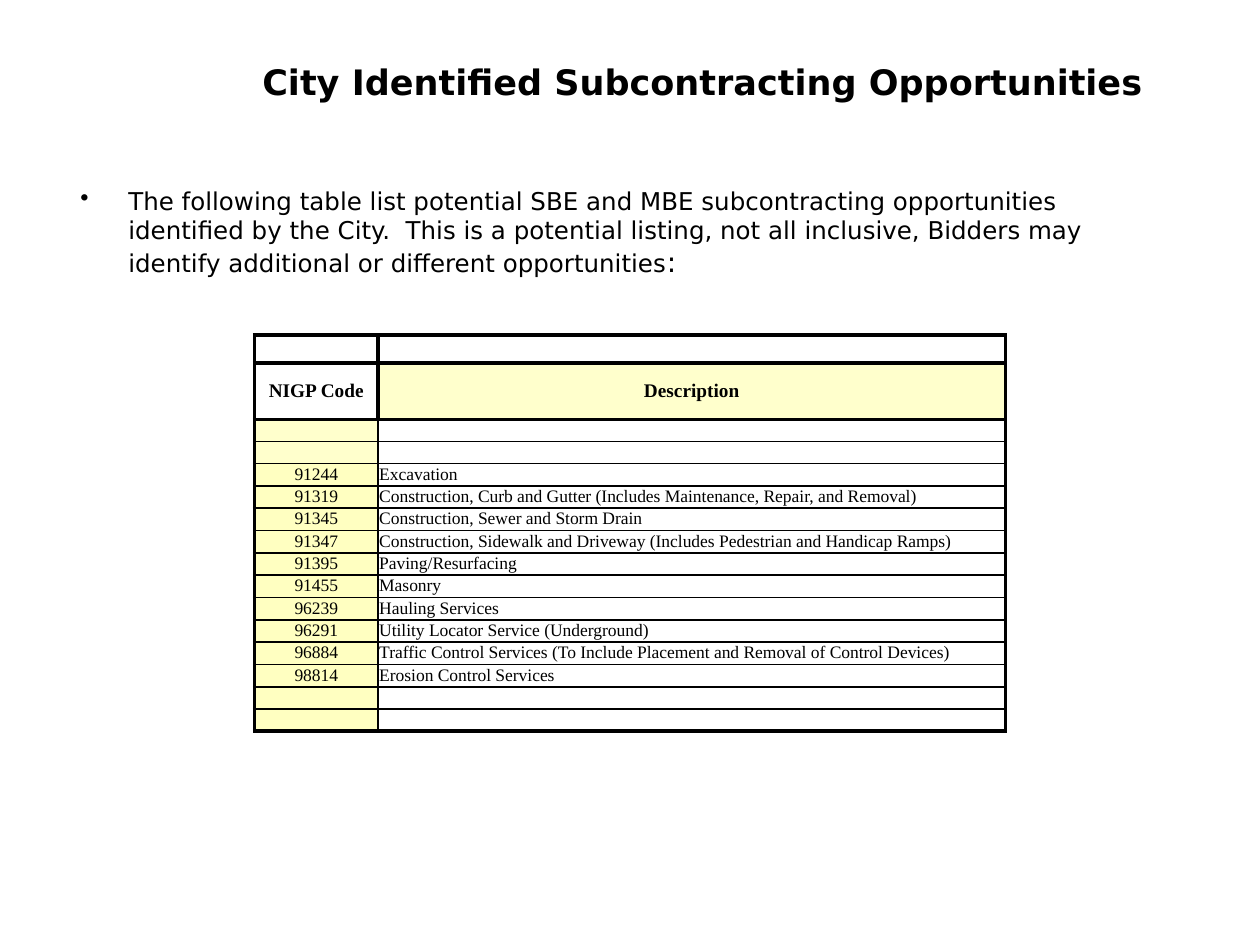
from dataclasses import dataclass

import pptx
import pptx.dml.color
import pptx.enum.text
import pptx.oxml
import pptx.oxml.ns
import pptx.util
from lxml import etree

ALIGN = pptx.enum.text.PP_ALIGN
ANCHOR = pptx.enum.text.MSO_ANCHOR
Inches, Pt, qn = pptx.util.Inches, pptx.util.Pt, pptx.oxml.ns.qn

SANS, SERIF = "DejaVu Sans", "Times New Roman"
BLACK, CREAM, YELLOW = "000000", "FFFFCC", "FFFFC1"
THICK, THIN = 2.25, 1
WIDTH, HEIGHT = 10, 7.5


@dataclass
class Row:
    code: str = ""
    description: str = ""
    code_fill: str = YELLOW
    description_fill: str = ""
    height: float = 0.175
    header: bool = False


ROWS = [
    Row(code_fill="", height=0.22, header=True),
    Row("NIGP Code", "Description", "", CREAM, 0.45, True),
    Row(code_fill=CREAM),
    Row(code_fill=CREAM),
    Row("91244", "Excavation"),
    Row("91319", "Construction, Curb and Gutter (Includes Maintenance, Repair, and Removal)"),
    Row("91345", "Construction, Sewer and Storm Drain"),
    Row("91347", "Construction, Sidewalk and Driveway (Includes Pedestrian and Handicap Ramps)"),
    Row("91395", "Paving/Resurfacing"),
    Row("91455", "Masonry"),
    Row("96239", "Hauling Services"),
    Row("96291", "Utility Locator Service (Underground)"),
    Row("96884", "Traffic Control Services (To Include Placement and Removal of Control Devices)"),
    Row("98814", "Erosion Control Services"),
    Row(),
    Row(),
]


def rgb(colour: str) -> pptx.dml.color.RGBColor:
    return pptx.dml.color.RGBColor.from_string(colour)


def add_text(p, text: str, *, size=14, font=SANS, bold=False, colour=BLACK, align=None):
    """Append a formatted run to a paragraph."""
    if align is not None:
        p.alignment = align
    r = p.add_run()
    r.text = text
    r.font.size, r.font.name, r.font.bold = Pt(size), font, bold
    r.font.color.rgb = rgb(colour)


def add_box(s, left: float, top: float, width: float, height: float, anchor=ANCHOR.TOP):
    """Add a wrapping text box, placed by shares of the slide, and return its paragraph."""
    sp = s.shapes.add_textbox(Inches(left * WIDTH), Inches(top * HEIGHT),
                              Inches(width * WIDTH), Inches(height * HEIGHT))
    tf = sp.text_frame
    tf.word_wrap, tf.vertical_anchor = True, anchor
    return tf.paragraphs[0]


def set_bullet(p, indent: float):
    pPr = p._p.get_or_add_pPr()
    pPr.set("marL", str(Inches(indent)))
    pPr.set("indent", str(-Inches(indent)))
    etree.SubElement(pPr, qn("a:buChar")).set("char", "•")


def set_borders(cell, **widths: float):
    """Draw the cell's borders; the lines must precede the fill."""
    tcPr = cell._tc.get_or_add_tcPr()
    for i, side in enumerate("LRTB"):
        ln = etree.Element(qn(f"a:ln{side}"), w=str(Pt(widths[side])))
        fill = etree.SubElement(ln, qn("a:solidFill"))
        etree.SubElement(fill, qn("a:srgbClr")).set("val", BLACK)
        tcPr.insert(i, ln)


def fill_cell(cell, text: str, fill: str, header: bool, centred: bool):
    margin = Inches(0 if header else 0.01)
    cell.margin_left = cell.margin_right = cell.margin_top = margin
    cell.margin_bottom = 0
    cell.vertical_anchor = ANCHOR.MIDDLE if header else ANCHOR.TOP
    if fill:
        cell.fill.solid()
        cell.fill.fore_color.rgb = rgb(fill)
    else:
        cell.fill.background()
    p = cell.text_frame.paragraphs[0]
    if text:
        add_text(p, text, size=11 if header else 10, font=SERIF, bold=header,
                 align=ALIGN.CENTER if centred else ALIGN.LEFT)
    else:
        # A small end mark keeps empty rows from growing
        etree.SubElement(p._p, qn("a:endParaRPr")).set("sz", "800")


def add_code_table(s, left: float, top: float, columns: list[float], rows: list[Row]):
    frame = s.shapes.add_table(len(rows), len(columns), Inches(left), Inches(top),
                               Inches(sum(columns)), Inches(sum(r.height for r in rows)))
    table = frame.table
    table.first_row = table.horz_banding = False
    for column, width in zip(table.columns, columns):
        column.width = Inches(width)
    for i, row in enumerate(rows):
        table.rows[i].height = Inches(row.height)
        after_header = i > 0 and rows[i - 1].header
        cells = [(row.code, row.code_fill), (row.description, row.description_fill)]
        for j, (text, fill) in enumerate(cells):
            cell = table.cell(i, j)
            fill_cell(cell, text, fill, row.header, row.header or j == 0)
            set_borders(
                cell,
                L=THICK if row.header or j == 0 else THIN,
                R=THICK if row.header or j == len(columns) - 1 else THIN,
                T=THICK if row.header or after_header else THIN,
                B=THICK if row.header or i == len(rows) - 1 else THIN,
            )


def main():
    prs = pptx.Presentation()
    prs.slide_width, prs.slide_height = Inches(WIDTH), Inches(HEIGHT)
    s = prs.slides.add_slide(prs.slide_layouts[6])

    # Title
    p = add_box(s, 0.175, 0.04, 0.775, 0.093, ANCHOR.MIDDLE)
    add_text(p, "City Identified Subcontracting Opportunities ", size=20, bold=True,
             align=ALIGN.CENTER)

    # Introduction
    p = add_box(s, 0.054, 0.19, 0.892, 0.112)
    set_bullet(p, 0.38)
    p.space_after = Pt(6)
    add_text(p, "The following table list potential SBE and MBE subcontracting opportunities "
                "identified by the City.  This is a potential listing, not all inclusive, "
                "Bidders may identify additional or different opportunities")
    add_text(p, ":", size=16)

    # Table of codes
    add_code_table(s, 2.02, 2.66, [0.98, 4.98], ROWS)

    prs.save("out.pptx")


if __name__ == "__main__":
    main()
